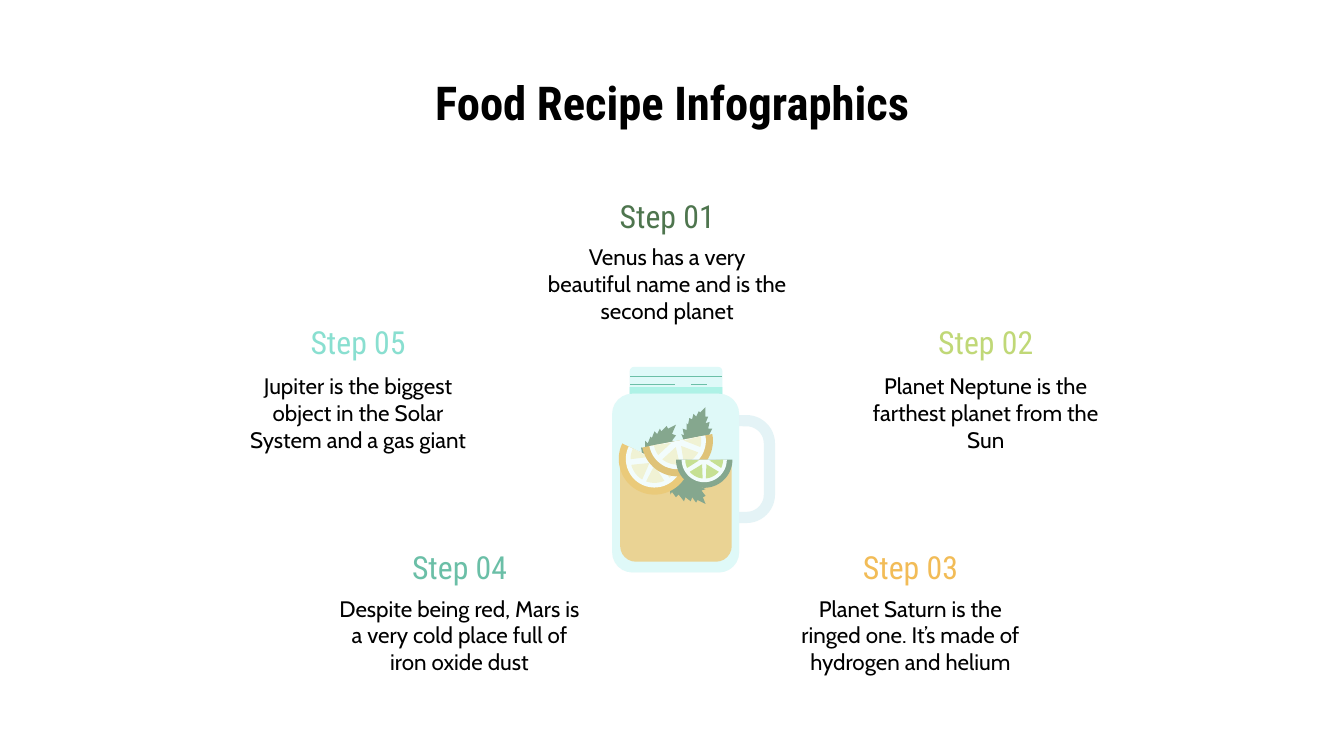
from dataclasses import dataclass
from math import cos, radians, sin

from lxml.etree import SubElement
from pptx import Presentation
from pptx.dml.color import RGBColor
from pptx.enum.shapes import MSO_CONNECTOR, MSO_SHAPE
from pptx.enum.text import MSO_ANCHOR, MSO_AUTO_SIZE, PP_ALIGN
from pptx.oxml.ns import qn
from pptx.util import Inches, Pt


@dataclass(frozen=True)
class Theme:
    head: str = "Roboto Condensed"
    body: str = "Cabin"
    title_size: int = 25
    step_size: int = 17
    body_size: int = 12
    black: str = "000000"
    white: str = "FFFFFF"
    green: str = "4E754E"
    lime: str = "C0D877"
    pulp: str = "B8D156"
    gold: str = "F2BC57"
    teal: str = "6BBFA7"
    aqua: str = "89DFD0"
    mint: str = "AEF2E6"
    glass: str = "DFF9F8"
    ice: str = "E4F3F6"
    peel: str = "F2AE2E"
    amber: str = "E0A22B"
    cream: str = "FCEEBE"


THEME = Theme()
COLS, ROWS = 1000, 562.5
CELL = Inches(10) // COLS

STEPS = [
    ("Step 01", "Venus has a very beautiful name and is the second planet",
     396.5, 149.5, 21.5, THEME.green),
    ("Step 02", "Planet Neptune is the farthest planet from the Sun",
     633.5, 243.5, 23.5, THEME.lime),
    ("Step 03", "Planet Saturn is the ringed one. It’s made of hydrogen and helium",
     577.5, 411, 21.5, THEME.gold),
    ("Step 04", "Despite being red, Mars is a very cold place full of iron oxide dust",
     242, 411, 21.5, THEME.teal),
    ("Step 05", "Jupiter is the biggest object in the Solar System and a gas giant",
     166.5, 243.5, 23.5, THEME.aqua),
]

LEAVES = [
    [(503, 316), (497, 319), (496, 317), (492, 321), (491, 319), (489, 323),
     (487, 321), (485, 326), (484, 325), (482, 330), (480, 328), (480, 334),
     (477, 333), (478, 339), (475, 338), (477, 343), (475, 344), (478, 349),
     (483, 350), (486, 353), (491, 353), (490, 351), (496, 351), (494, 350),
     (500, 346), (498, 346), (501, 342), (499, 340), (504, 334), (501, 334),
     (504, 329), (500, 328), (503, 324), (500, 323)],
    [(506, 346), (500, 349), (499, 353), (495, 359), (497, 359), (496, 364),
     (498, 362), (499, 368), (500, 366), (503, 370), (505, 368), (509, 373),
     (510, 370), (514, 373), (515, 370), (518, 374), (519, 372), (525, 375),
     (523, 370), (525, 369), (522, 365), (525, 364), (521, 362), (523, 361),
     (519, 358), (520, 357), (516, 355), (518, 353), (513, 352), (514, 350),
     (510, 350), (511, 348), (509, 347), (506, 348)],
    [(525, 303), (521, 307), (520, 306), (518, 310), (516, 308), (515, 312),
     (513, 311), (512, 316), (511, 315), (511, 320), (508, 319), (509, 324),
     (507, 323), (509, 328), (506, 328), (509, 332), (507, 333), (512, 337),
     (516, 336), (519, 338), (523, 337), (522, 335), (527, 334), (525, 334),
     (529, 330), (527, 330), (529, 325), (527, 325), (530, 319), (527, 319),
     (528, 314), (525, 315), (527, 310), (525, 310)],
]


def tint(color):
    return RGBColor.from_string(color)


def grid(*cells):
    return [round(cell * CELL) for cell in cells]


def paint(shape, color, alpha=None):
    shape.shadow.inherit = False
    shape.line.fill.background()
    shape.fill.solid()
    shape.fill.fore_color.rgb = tint(color)
    if alpha:
        node = shape._element.spPr.find(".//" + qn("a:srgbClr"))
        SubElement(node, qn("a:alpha")).set("val", str(alpha * 1000))


def style(frame, font, size, color, bold=False):
    frame.word_wrap = True
    frame.auto_size = MSO_AUTO_SIZE.NONE
    frame.margin_left = frame.margin_right = Inches(0.1)
    frame.margin_top = frame.margin_bottom = Inches(0.1)
    for para in frame.paragraphs:
        para.alignment = PP_ALIGN.CENTER
        for run in para.runs:
            run.font.name = font
            run.font.size = Pt(size)
            run.font.bold = bold
            run.font.color.rgb = tint(color)


def add_title(slide, text):
    title = slide.shapes.title
    title.left, title.top, title.width, title.height = grid(50.5, 45, 899, 63)
    frame = title.text_frame
    frame.text = text
    frame.vertical_anchor = MSO_ANCHOR.TOP
    style(frame, THEME.head, THEME.title_size, THEME.black, True)


def add_text(slide, text, place, anchor, font, size, color):
    frame = slide.shapes.add_textbox(*grid(*place)).text_frame
    frame.text = text
    frame.vertical_anchor = anchor
    style(frame, font, size, color)


def add_step(slide, name, text, left, top, gap, color):
    add_text(slide, text, (left, top + gap, 200, 73), MSO_ANCHOR.TOP,
             THEME.body, THEME.body_size, THEME.black)
    add_text(slide, name, (left, top, 200, 22), MSO_ANCHOR.MIDDLE,
             THEME.head, THEME.step_size, color)


def add_block(slide, kind, place, bends, color, alpha=None):
    shape = slide.shapes.add_shape(kind, *grid(*place))
    for index, bend in enumerate(bends):
        shape.adjustments[index] = bend
    paint(shape, color, alpha)
    return shape


def add_shape(slide, points, color):
    start, *rest = [grid(*point) for point in points]
    builder = slide.shapes.build_freeform(*start, scale=1.0)
    builder.add_line_segments(rest, close=True)
    paint(builder.convert_to_shape(), color)


def add_line(slide, left, right, top):
    line = slide.shapes.add_connector(
        MSO_CONNECTOR.STRAIGHT, *grid(left, top, right, top))
    line.line.color.rgb = tint(THEME.teal)
    line.line.width = Pt(0.75)
    SubElement(line._element.spPr, qn("a:effectLst"))


def arc(x, y, radius, start, end):
    count = max(8, round((end - start) / 5))
    turns = [radians(start + (end - start) * i / count) for i in range(count + 1)]
    return [(x + radius * cos(turn), y + radius * sin(turn)) for turn in turns]


def add_fruit(slide, x, y, radius, tilt, rind, flesh):
    for share, color in ((1, rind), (0.8, THEME.white)):
        add_shape(slide, arc(x, y, radius * share, tilt, tilt + 180), color)
    for start, end, lean in ((0, 26, 8), (40, 85, 65), (95, 140, 115), (154, 180, 172)):
        tip = arc(x, y, radius * 0.18, tilt + lean, tilt + lean)[0]
        rim = arc(x, y, radius * 0.67, tilt + start, tilt + end)
        add_shape(slide, [tip] + rim, flesh)


def add_jar(slide):
    full, base = MSO_SHAPE.ROUNDED_RECTANGLE, MSO_SHAPE.ROUND_2_SAME_RECTANGLE
    body = (full, (455.5, 293, 94.5, 133), [0.16], THEME.glass)
    add_block(slide, full, (468.5, 273, 69, 27), [0.12], THEME.glass)
    add_block(slide, base, (468.5, 288, 69, 12), [0, 0.5], THEME.mint)
    grip = add_block(slide, full, (507, 313, 65.5, 72), [0.26], THEME.ice)
    grip.fill.background()
    grip.line.color.rgb = tint(THEME.ice)
    grip.line.width = Pt(6)
    add_block(slide, *body)
    add_line(slide, 514, 526, 286)
    add_block(slide, base, (461.5, 345, 83, 73), [0, 0.16], THEME.gold)
    for leaf in LEAVES:
        add_shape(slide, leaf, THEME.green)
    add_fruit(slide, 487, 341.5, 26.6, 25.6, THEME.peel, THEME.cream)
    add_fruit(slide, 504, 328, 26.5, -10.9, THEME.amber, THEME.cream)
    add_fruit(slide, 524, 342, 21, 0, THEME.green, THEME.pulp)
    add_line(slide, 469, 537, 280)
    add_line(slide, 469, 502, 286)
    add_block(slide, *body, alpha=38)


def main():
    deck = Presentation()
    deck.slide_width, deck.slide_height = grid(COLS, ROWS)
    slide = deck.slides.add_slide(deck.slide_layouts[5])
    add_title(slide, "Food Recipe Infographics")
    add_jar(slide)
    for step in STEPS:
        add_step(slide, *step)
    deck.save("out.pptx")


if __name__ == "__main__":
    main()
